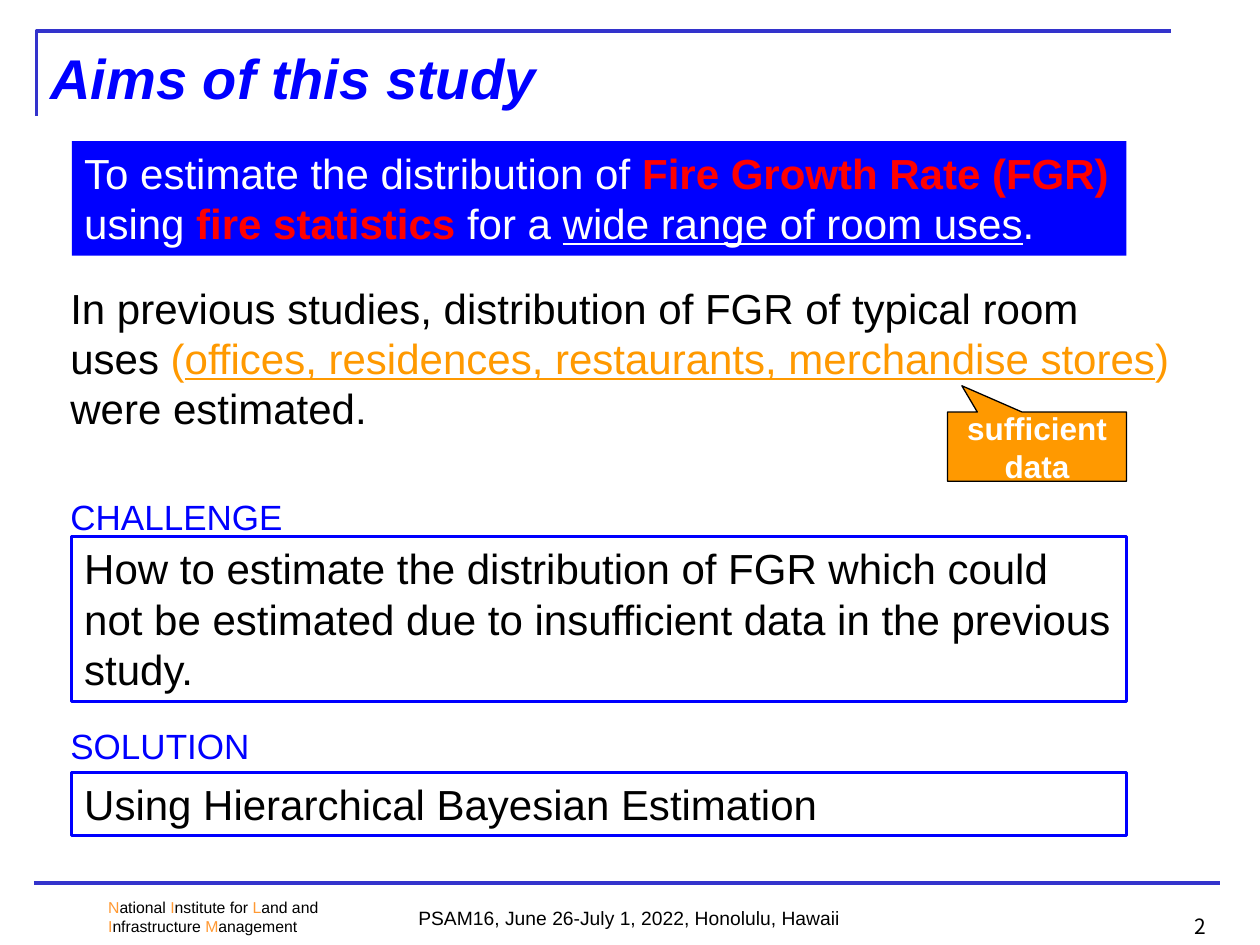
from dataclasses import dataclass
from lxml.etree import SubElement
from pptx import Presentation
from pptx.dml.color import RGBColor as Rgb
from pptx.enum.shapes import MSO_CONNECTOR as Link, MSO_SHAPE as Shape
from pptx.enum.text import MSO_ANCHOR as Anchor, PP_ALIGN as Align
from pptx.oxml.ns import qn
from pptx.util import Inches, Pt


@dataclass(frozen=True)
class Theme:
    """Colours, fonts and type sizes of the slide."""
    blue: str = "0000FF"
    rule: str = "3333CC"
    red: str = "FF0000"
    orange: str = "FF9900"
    accent: str = "FF9933"
    black: str = "000000"
    white: str = "FFFFFF"
    font: str = "Arial"
    digit: str = "Noto Sans CJK JP"
    title: int = 32
    body: int = 24
    head: int = 20
    note: int = 18
    page: int = 12
    foot: int = 11
    small: int = 9
    lead: float = 1.2


T = Theme()
LEFT, WIDTH = 0.57, 8.37


def place(box):
    """Turn a box in inches into lengths."""
    return [Inches(v) for v in box]


def style(run, size, colour, marks="", font=T.font):
    """Format one run; marks holds b, i or u."""
    face = run.font
    face.name, face.size = font, Pt(size)
    face.color.rgb = Rgb.from_string(colour)
    face.bold, face.italic, face.underline = ("b" in marks, "i" in marks, "u" in marks)


def write(shape, parts, size, align=Align.LEFT, anchor=Anchor.TOP, wrap=True, font=T.font):
    """Fill a shape with one paragraph of (text, colour, marks) parts."""
    frame = shape.text_frame
    frame.word_wrap, frame.vertical_anchor = wrap, anchor
    para = frame.paragraphs[0]
    para.alignment, para.line_spacing = align, Pt(size * T.lead)
    for text, colour, *marks in parts:
        run = para.add_run()
        run.text = text
        style(run, size, colour, "".join(marks), font)


def label(slide, box, parts, size, **opts):
    """Add a text box."""
    write(slide.shapes.add_textbox(*place(box)), parts, size, **opts)


def panel(slide, box, parts, size, fill=None, line=None, width=1.5, kind=Shape.RECTANGLE, **opts):
    """Add a filled or outlined shape with text."""
    shape = slide.shapes.add_shape(kind, *place(box))
    shape.shadow.inherit = False
    if fill:
        shape.fill.solid()
        shape.fill.fore_color.rgb = Rgb.from_string(fill)
    else:
        shape.fill.background()
    if line:
        stroke(shape, line, width)
    else:
        shape.line.fill.background()
    write(shape, parts, size, **opts)
    return shape


def stroke(shape, colour, width):
    """Set the line colour and width."""
    shape.line.color.rgb = Rgb.from_string(colour)
    shape.line.width = Pt(width)


def frame(slide):
    """Draw the corner rule and the footer rule."""
    build = slide.shapes.build_freeform(Inches(0.29), Inches(0.92))
    build.add_line_segments([place((0.29, 0.25)), place((9.29, 0.25))], close=False)
    corner = build.convert_to_shape()
    corner.shadow.inherit = False
    corner.fill.background()
    base = slide.shapes.add_connector(Link.STRAIGHT, *place((0.27, 7.01, 9.68, 7.01)))
    for item in (corner, base):
        stroke(item, T.rule, 2.25)
    SubElement(base._element.spPr, qn("a:effectLst"))


def footer(slide):
    """Write the event, the institute and the page number."""
    label(slide, (3.21, 7.14, 3.57, 0.29),
          [("PSAM16, June 26-July 1, 2022, Honolulu, Hawaii", T.black)],
          T.foot, align=Align.CENTER, wrap=False)
    words = ("National ", "Institute for ", "Land and ", "Infrastructure ", "Management")
    parts = [part for word in words
             for part in ((word[0], T.accent), (word[1:], T.black))]
    label(slide, (0.76, 7.08, 2.21, 0.4), parts, T.small)
    label(slide, (7.34, 7, 2.33, 0.5), [("2", T.black)], T.page,
          align=Align.RIGHT, anchor=Anchor.BOTTOM, font=T.digit)


def header(slide):
    """Place and format the title."""
    title = slide.shapes.title
    title.left, title.top, title.width, title.height = place((0.3, 0.28, 9.35, 0.67))
    write(title, [("Aims of this study", T.blue, "bi")], T.title, anchor=Anchor.MIDDLE)


def section(slide, top, head, box_top, height, text):
    """Add a heading with an outlined statement below it."""
    panel(slide, (LEFT, box_top, WIDTH, height), [(text, T.black)], T.body, line=T.blue)
    label(slide, (0.46, top, 1.92, 0.44), [(head, T.blue)], T.head)


def main():
    """Build and save the slide."""
    deck = Presentation()
    deck.slide_width, deck.slide_height = Inches(10), Inches(7.5)
    slide = deck.slides.add_slide(deck.slide_layouts[5])
    frame(slide)
    footer(slide)
    header(slide)
    panel(slide, (LEFT, 1.12, WIDTH, 0.91), [
        ("To estimate the distribution of ", T.white),
        ("Fire Growth Rate (FGR) ", T.red, "b"),
        ("using ", T.white),
        ("fire statistics ", T.red, "b"),
        ("for a ", T.white),
        ("wide range of room uses", T.white, "u"),
        (".", T.white)], T.body, fill=T.blue)
    label(slide, (0.46, 2.19, 8.99, 1.31), [
        ("In previous studies, distribution of FGR of typical room uses ", T.black),
        ("(", T.orange),
        ("offices, residences, restaurants, merchandise stores", T.orange, "u"),
        (")", T.orange),
        (" were estimated.", T.black)], T.body)
    section(slide, 3.88, "CHALLENGE", 4.26, 1.31,
            "How to estimate the distribution of FGR which could not be "
            "estimated due to insufficient data in the previous study.")
    section(slide, 5.7, "SOLUTION", 6.13, 0.5, "Using Hierarchical Bayesian Estimation")
    note = panel(slide, (7.52, 3.27, 1.42, 0.55), [("sufficient data", T.white, "b")],
                 T.note, fill=T.orange, line=T.black, width=0.75,
                 kind=Shape.RECTANGULAR_CALLOUT, align=Align.CENTER, anchor=Anchor.MIDDLE)
    note.adjustments[0], note.adjustments[1] = -0.42, -0.88
    deck.save("out.pptx")


if __name__ == "__main__":
    main()
